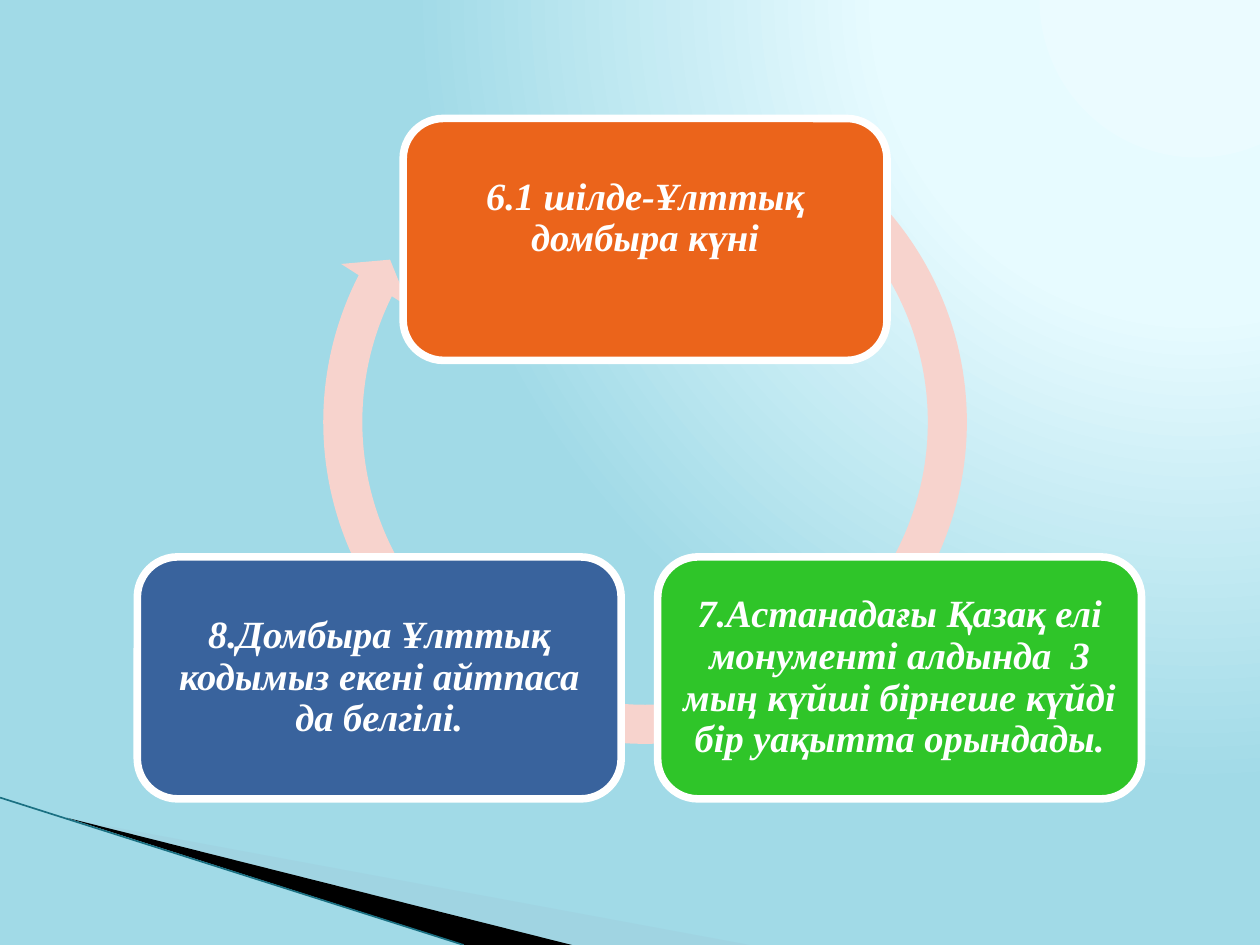
import pptx
import pptx.util
import pptx.oxml
import pptx.oxml.ns
import pptx.dml.color
import pptx.enum.shapes
import pptx.enum.text
from lxml import etree

Inches = pptx.util.Inches
Pt = pptx.util.Pt
RGB = pptx.dml.color.RGBColor
Kind = pptx.enum.shapes.MSO_SHAPE
qn = pptx.oxml.ns.qn

WHITE = RGB(0xFF, 0xFF, 0xFF)
BLACK = RGB(0x00, 0x00, 0x00)
ORANGE = RGB(0xEB, 0x64, 0x1B)
GREEN = RGB(0x2F, 0xC5, 0x29)
BLUE = RGB(0x39, 0x63, 0x9D)
PINK = RGB(0xF7, 0xD3, 0xCD)
MIST = RGB(0xA0, 0xCB, 0xDC)
TEAL = RGB(0x1A, 0x70, 0x82)
GLOW = ((0, RGB(0xEB, 0xFB, 0xFF)), (40, RGB(0xE7, 0xFB, 0xFF)), (100, RGB(0xA1, 0xDA, 0xE7)))

CARD_W, CARD_H, PAD = 3.84, 1.92, 0.09
CARDS = (
    (2.11, 0, ORANGE, "6.1 шілде-Ұлттық домбыра күні", 0.33),
    (4.13, 3.48, GREEN, "7.Астанадағы Қазақ елі монументі алдында  3 мың күйші бірнеше күйді бір уақытта орындады.", 0),
    (0, 3.48, BLUE, "8.Домбыра Ұлттық кодымыз екені айтпаса да белгілі.", 0),
)


def paint(shape, color):
    """Give a shape a flat fill without line or shadow."""
    shape.shadow.inherit = False
    shape.fill.solid()
    shape.fill.fore_color.rgb = color
    shape.line.fill.background()


def backdrop(slide):
    """Fill the background with a round glow from the upper right."""
    slide.background.fill.gradient()
    old = slide.element.find(".//" + qn("a:gradFill"))
    stops = "".join(
        f'<a:gs pos="{pos * 1000}"><a:srgbClr val="{color}"/></a:gs>' for pos, color in GLOW)
    new = pptx.oxml.parse_xml(
        f'<a:gradFill {pptx.oxml.ns.nsdecls("a")} rotWithShape="1"><a:gsLst>{stops}</a:gsLst>'
        '<a:path path="circle"><a:fillToRect l="95000" t="-106000" r="5000" b="206000"/></a:path>'
        '</a:gradFill>')
    old.getparent().replace(old, new)


def wedge(slide, left, top, points, color):
    """Draw a closed outline from points relative to its corner."""
    spots = [(Inches(left + x), Inches(top + y)) for x, y in points]
    pen = slide.shapes.build_freeform(*spots[0], scale=1.0)
    pen.add_line_segments(spots[1:], close=True)
    shape = pen.convert_to_shape()
    paint(shape, color)
    return shape


def corner(slide, left, top):
    """Draw the slanted bands and line at the lower left."""
    pale = wedge(slide, left + 0.55, top + 0.17, ((0, 0), (5.4, 1), (4.01, 1)), MIST)
    tint = pale.element.find(".//" + qn("a:srgbClr"))
    etree.SubElement(tint, qn("a:alpha")).set("val", "40000")
    wedge(slide, left + 0.53, top + 0.16, ((0, 0), (4.01, 1.01), (3.16, 1.01)), BLACK)
    line = slide.shapes.add_connector(
        pptx.enum.shapes.MSO_CONNECTOR.STRAIGHT,
        Inches(left), Inches(top), Inches(left + 3.68), Inches(top + 1.17))
    line.line.color.rgb = TEAL
    line.line.width = Pt(0.95)
    etree.SubElement(line.element.spPr, qn("a:effectLst"))


def card(slide, left, top, color, text, lift):
    """Draw one rounded card with its centred text."""
    shape = slide.shapes.add_shape(
        Kind.ROUNDED_RECTANGLE, Inches(left), Inches(top), Inches(CARD_W), Inches(CARD_H))
    paint(shape, color)
    shape.line.color.rgb = WHITE
    shape.line.width = Pt(4.33)
    frame = shape.text_frame
    frame.word_wrap = True
    frame.vertical_anchor = pptx.enum.text.MSO_ANCHOR.MIDDLE
    frame.margin_left = frame.margin_right = frame.margin_top = Inches(PAD)
    frame.margin_bottom = Inches(PAD + lift)
    para = frame.paragraphs[0]
    para.text = text
    para.alignment = pptx.enum.text.PP_ALIGN.CENTER
    para.line_spacing = 0.9
    font = para.font
    font.name, font.size = "Times New Roman", Pt(22)
    font.bold = font.italic = True
    font.color.rgb = WHITE


def cycle(slide, left, top):
    """Draw the ring arrow and the three cards on it."""
    size = Inches(5.44)
    ring = slide.shapes.add_shape(
        Kind.CIRCULAR_ARROW, Inches(left + 1.31), Inches(top - 0.31), size, size)
    for i, value in enumerate((0.057, 3.405, 124.088, 182.79, 0.059)):
        ring.adjustments[i] = value
    paint(ring, PINK)
    for x, y, color, text, lift in CARDS:
        card(slide, left + x, top + y, color, text, lift)


def main():
    """Build and save the slide."""
    deck = pptx.Presentation()
    deck.slide_width, deck.slide_height = Inches(10), Inches(7.5)
    slide = deck.slides.add_slide(deck.slide_layouts[6])
    backdrop(slide)
    corner(slide, 0, 6.33)
    cycle(slide, 1.09, 0.94)
    deck.save("out.pptx")


if __name__ == "__main__":
    main()
